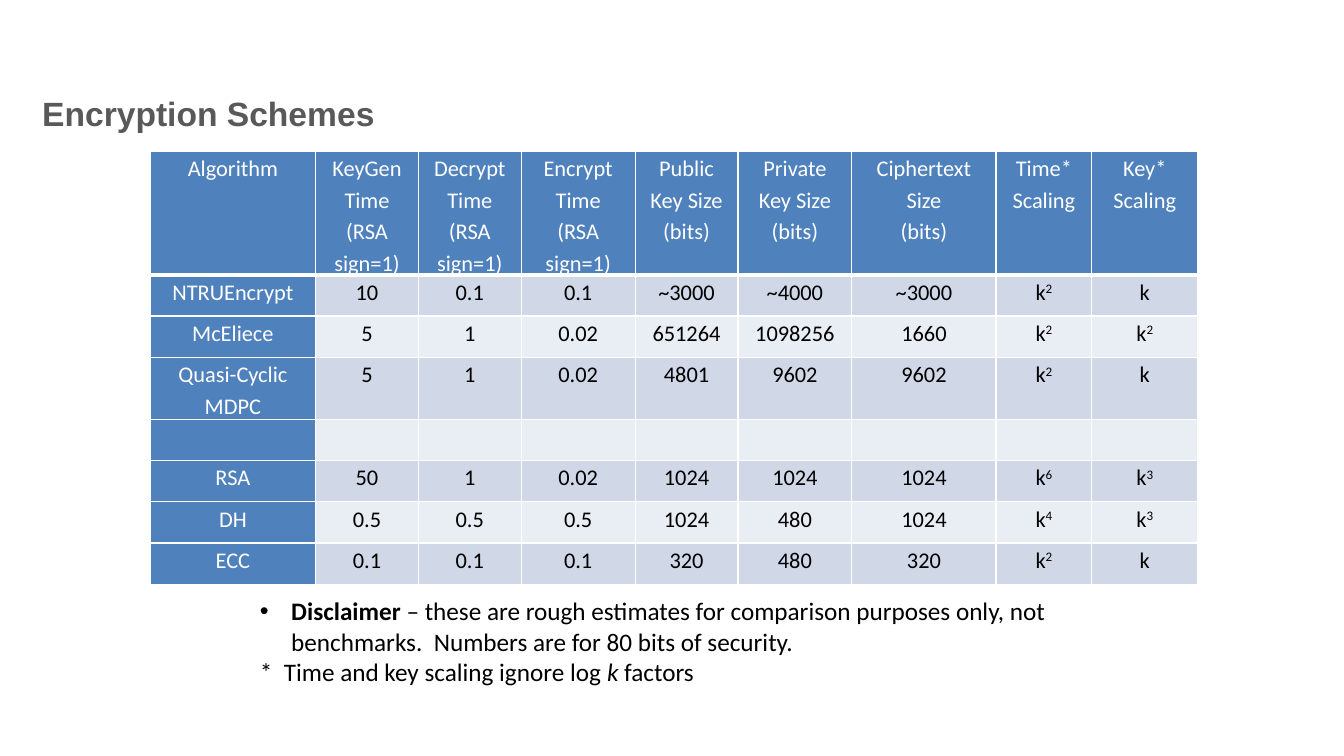
from lxml.etree import SubElement
from pptx import Presentation
from pptx.dml.color import RGBColor
from pptx.enum.text import MSO_ANCHOR, PP_ALIGN
from pptx.oxml.ns import qn
from pptx.util import Inches, Pt

WHITE = RGBColor(0xFF, 0xFF, 0xFF)
BLACK = RGBColor(0x00, 0x00, 0x00)
GRAY = RGBColor(0x59, 0x59, 0x59)
BLUE = RGBColor(0x4F, 0x81, 0xBD)
BAND_DARK = RGBColor(0xD0, 0xD8, 0xE8)
BAND_LIGHT = RGBColor(0xE9, 0xED, 0xF4)

COLUMN_WIDTHS = [1.64, 1.02, 1.02, 1.13, 1.02, 1.13, 1.43, 0.95, 1.05]
ROW_HEIGHTS = [1.2, 0.41, 0.41, 0.59, 0.41, 0.41, 0.41, 0.41]

# "\n" starts a new paragraph, "^" marks the superscript after it
SCHEMES = [
    ["Algorithm", "KeyGen Time\n(RSA sign=1)", "Decrypt Time\n(RSA sign=1)",
     "Encrypt Time\n(RSA sign=1)", "Public Key Size\n(bits)", "Private Key Size\n(bits)",
     "Ciphertext Size\n(bits)", "Time* Scaling", "Key*\nScaling"],
    ["NTRUEncrypt", "10", "0.1", "0.1", "~3000", "~4000", "~3000", "k^2", "k"],
    ["McEliece", "5", "1", "0.02", "651264", "1098256", "1660", "k^2", "k^2"],
    ["Quasi-Cyclic MDPC", "5", "1", "0.02", "4801", "9602", "9602", "k^2", "k"],
    [""] * len(COLUMN_WIDTHS),
    ["RSA", "50", "1", "0.02", "1024", "1024", "1024", "k^6", "k^3"],
    ["DH", "0.5", "0.5", "0.5", "1024", "480", "1024", "k^4", "k^3"],
    ["ECC", "0.1", "0.1", "0.1", "320", "480", "320", "k^2", "k"],
]


def add_run(paragraph, text, size, color, **formats):
    run = paragraph.add_run()
    run.text = text
    run.font.color.rgb = color
    values = {"name": "Calibri", "size": Pt(size), "bold": False, **formats}
    for name, value in values.items():
        setattr(run.font, name, value)
    return run


def add_text_frame(slide, left, top, width, height):
    box = slide.shapes.add_textbox(Inches(left), Inches(top), Inches(width), Inches(height))
    box.text_frame.word_wrap = True
    return box.text_frame


def add_title(slide, left, top, width, height):
    frame = add_text_frame(slide, left, top, width, height)
    frame.vertical_anchor = MSO_ANCHOR.BOTTOM
    paragraph = frame.paragraphs[0]
    paragraph.line_spacing = Pt(26)
    add_run(paragraph, "Encryption Schemes", 24, GRAY, name="Arial", bold=True)


def set_borders(cell, widths):
    """Draw white borders; they must precede the fill in the cell properties."""
    properties = cell._tc.get_or_add_tcPr()
    for side, width in widths.items():
        line = SubElement(properties, qn(f"a:{side}"), w=str(Pt(width)))
        fill = SubElement(line, qn("a:solidFill"))
        SubElement(fill, qn("a:srgbClr"), val=str(WHITE))


def fill_cell(cell, text, color):
    margins = {"margin_left": 0.08, "margin_right": 0.08, "margin_top": 0, "margin_bottom": 0}
    for name, value in margins.items():
        setattr(cell, name, Inches(value))
    for index, line in enumerate(text.split("\n")):
        frame = cell.text_frame
        paragraph = frame.add_paragraph() if index else frame.paragraphs[0]
        paragraph.alignment = PP_ALIGN.CENTER
        paragraph.line_spacing = 1.15
        paragraph.font.size = Pt(16)
        base, _, exponent = line.partition("^")
        if base:
            add_run(paragraph, base, 16, color)
        if exponent:
            run = add_run(paragraph, exponent, 16, color)
            run._r.get_or_add_rPr().set("baseline", "30000")


def add_scheme_table(slide, left, top):
    frame = slide.shapes.add_table(
        len(ROW_HEIGHTS), len(COLUMN_WIDTHS), Inches(left), Inches(top),
        Inches(sum(COLUMN_WIDTHS)), Inches(sum(ROW_HEIGHTS)))
    table = frame.table
    table.first_row = table.horz_banding = False
    for column, width in zip(table.columns, COLUMN_WIDTHS):
        column.width = Inches(width)
    for row, height in zip(table.rows, ROW_HEIGHTS):
        row.height = Inches(height)

    for row_index, texts in enumerate(SCHEMES):
        band = BAND_DARK if row_index % 2 else BAND_LIGHT
        for column_index, text in enumerate(texts):
            cell = table.cell(row_index, column_index)
            is_heading = row_index == 0 or column_index == 0
            bottom = 3 if row_index == 0 else 1
            set_borders(cell, {"lnL": 1, "lnR": 1, "lnT": 1, "lnB": bottom})
            cell.fill.solid()
            cell.fill.fore_color.rgb = BLUE if is_heading else band
            fill_cell(cell, text, WHITE if is_heading else BLACK)


def add_notes_box(slide, left, top, width, height):
    frame = add_text_frame(slide, left, top, width, height)

    # Bulleted disclaimer with a hanging indent
    disclaimer = frame.paragraphs[0]
    properties = disclaimer._p.get_or_add_pPr()
    properties.set("marL", str(Inches(0.31)))
    properties.set("indent", str(Inches(-0.31)))
    SubElement(properties, qn("a:buFont"), typeface="Arial")
    SubElement(properties, qn("a:buChar"), char="•")
    add_run(disclaimer, "Disclaimer", 18, BLACK, bold=True)
    add_run(disclaimer, " – these are rough estimates for comparison purposes only, "
            "not benchmarks.  Numbers are for 80 bits of security.", 18, BLACK)

    # Footnote on scaling
    footnote = frame.add_paragraph()
    add_run(footnote, "*  Time and key scaling ignore log ", 18, BLACK)
    add_run(footnote, "k", 18, BLACK, italic=True)
    add_run(footnote, " factors", 18, BLACK)


def main():
    presentation = Presentation()
    presentation.slide_width = Inches(13.33)
    presentation.slide_height = Inches(7.5)
    slide = presentation.slides.add_slide(presentation.slide_layouts[6])
    add_title(slide, 0.32, 0.54, 12.33, 0.83)
    add_scheme_table(slide, 1.49, 1.5)
    add_notes_box(slide, 2.48, 5.86, 8.42, 1.01)
    presentation.save("out.pptx")


if __name__ == "__main__":
    main()
